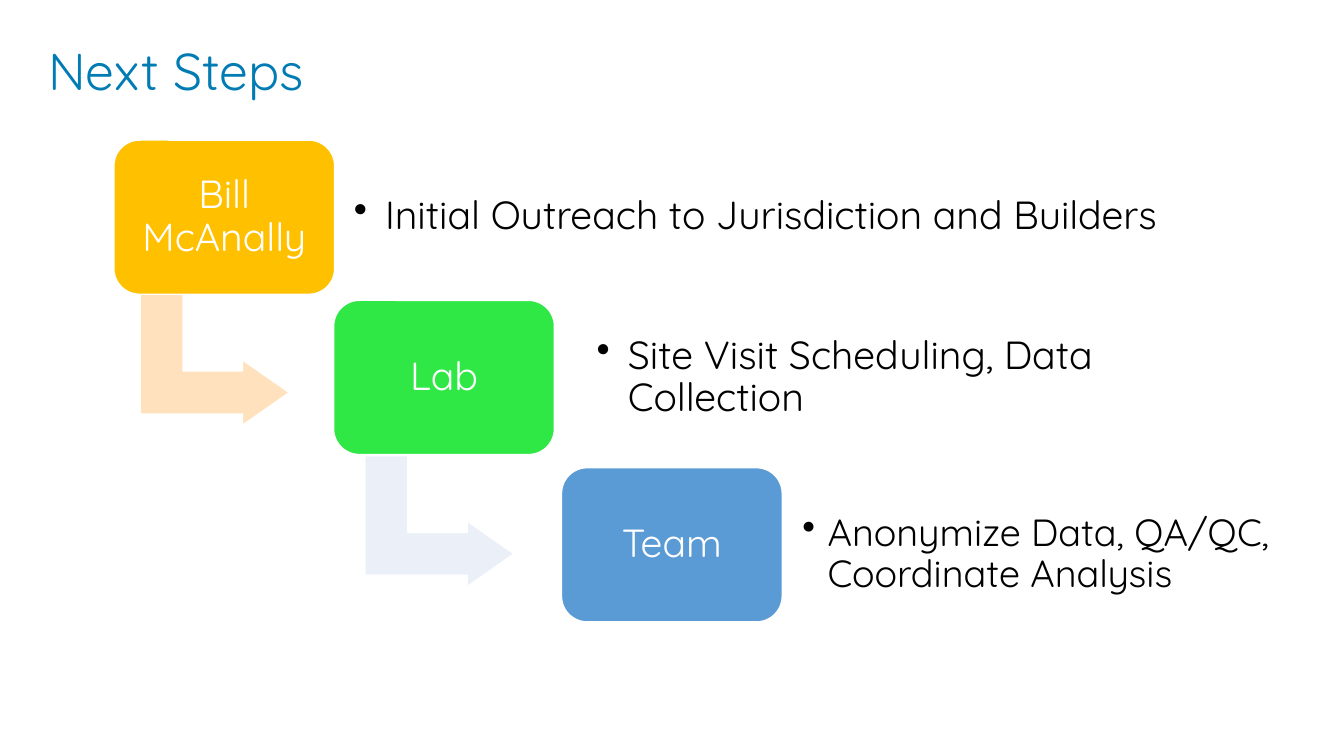
import pptx
import pptx.util
import pptx.dml.color
import pptx.enum.shapes
import pptx.enum.text
import pptx.oxml.ns
from lxml import etree

UNIT = pptx.util.Inches(0.1)
COLS, ROWS = 133.33, 75
BOX_W, BOX_H = 21.9, 15.3
ARROW_W, ARROW_H = 13, 14.8
FONT = "Quicksand"
COLORS = {
    "title": "007BB3", "text": "000000", "white": "FFFFFF",
    "amber": "FFC000", "green": "30E845", "blue": "5B9BD5",
    "peach": "FFE2BD", "mist": "EBF0F8",
}
STEPS = [
    dict(name="Bill McAnally", color="amber", at=(11.3, 13.9),
         task="Initial Outreach to Jurisdiction and Builders",
         task_at=(33.9, 15.3, 82.2), indent=0.31, inset=0.12, size=28,
         arrow=("peach", 14.8, 28.3)),
    dict(name="Lab", color="green", at=(33.1, 29.8),
         task="Site Visit Scheduling, Data Collection",
         task_at=(58, 31.3, 67.6), indent=0.31, inset=0.12, size=28,
         arrow=("mist", 37.1, 44.3)),
    dict(name="Team", color="blue", at=(55.7, 46.4),
         task="Anonymize Data, QA/QC, Coordinate Analysis",
         task_at=(78.1, 48.8, 54.5), indent=0.25, inset=0.15, size=27,
         arrow=None),
]


def rgb(name):
    return pptx.dml.color.RGBColor.from_string(COLORS[name])


def grid(*cells):
    return [round(c * UNIT) for c in cells]


def write(sp, text, size, color, inset=None):
    """Fill a shape with one paragraph and return that paragraph."""
    tf = sp.text_frame
    tf.word_wrap = True
    tf.vertical_anchor = pptx.enum.text.MSO_ANCHOR.MIDDLE
    if inset is not None:
        tf.margin_left = tf.margin_right = pptx.util.Inches(inset)
        tf.margin_top = tf.margin_bottom = pptx.util.Inches(inset)
    p = tf.paragraphs[0]
    p.text = text
    p.line_spacing = 0.9
    p.font.name = FONT
    p.font.size = pptx.util.Pt(size)
    p.font.color.rgb = rgb(color)
    return p


def add_bullet(p, indent):
    pPr = p._p.get_or_add_pPr()
    width = pptx.util.Inches(indent)
    pPr.set("marL", str(width))
    pPr.set("indent", str(-width))
    bullet = etree.Element(pptx.oxml.ns.qn("a:buChar"), char="•")
    pPr.find(pptx.oxml.ns.qn("a:defRPr")).addprevious(bullet)


def add_block(s, kind, box, color, adjustments):
    sp = s.shapes.add_shape(kind, *grid(*box))
    sp.shadow.inherit = False
    sp.fill.solid()
    sp.fill.fore_color.rgb = rgb(color)
    sp.line.color.rgb = rgb("white")
    sp.line.width = pptx.util.Pt(1)
    for i, value in enumerate(adjustments):
        sp.adjustments[i] = value
    return sp


def add_arrow(s, color, left, top):
    sp = add_block(s, pptx.enum.shapes.MSO_SHAPE.BENT_UP_ARROW,
                   (left, top, ARROW_W, ARROW_H), color, (0.328, 0.25, 0.358))
    sp.rotation = 90


def add_step(s, step):
    if step["arrow"]:
        add_arrow(s, *step["arrow"])
    sp = add_block(s, pptx.enum.shapes.MSO_SHAPE.ROUNDED_RECTANGLE,
                   (*step["at"], BOX_W, BOX_H), step["color"], (0.167,))
    p = write(sp, step["name"], 28, "white", 0.15)
    p.alignment = pptx.enum.text.PP_ALIGN.CENTER
    task = s.shapes.add_textbox(*grid(*step["task_at"], 12.4))
    p = write(task, step["task"], step["size"], "text", step["inset"])
    add_bullet(p, step["indent"])


def main():
    prs = pptx.Presentation()
    prs.slide_width, prs.slide_height = grid(COLS, ROWS)
    s = prs.slides.add_slide(prs.slide_layouts[6])
    title = s.shapes.add_textbox(*grid(3.8, 4.1, 122.9, 6.4))
    write(title, "Next Steps", 37, "title")
    for step in STEPS:
        add_step(s, step)
    prs.save("out.pptx")


if __name__ == "__main__":
    main()
